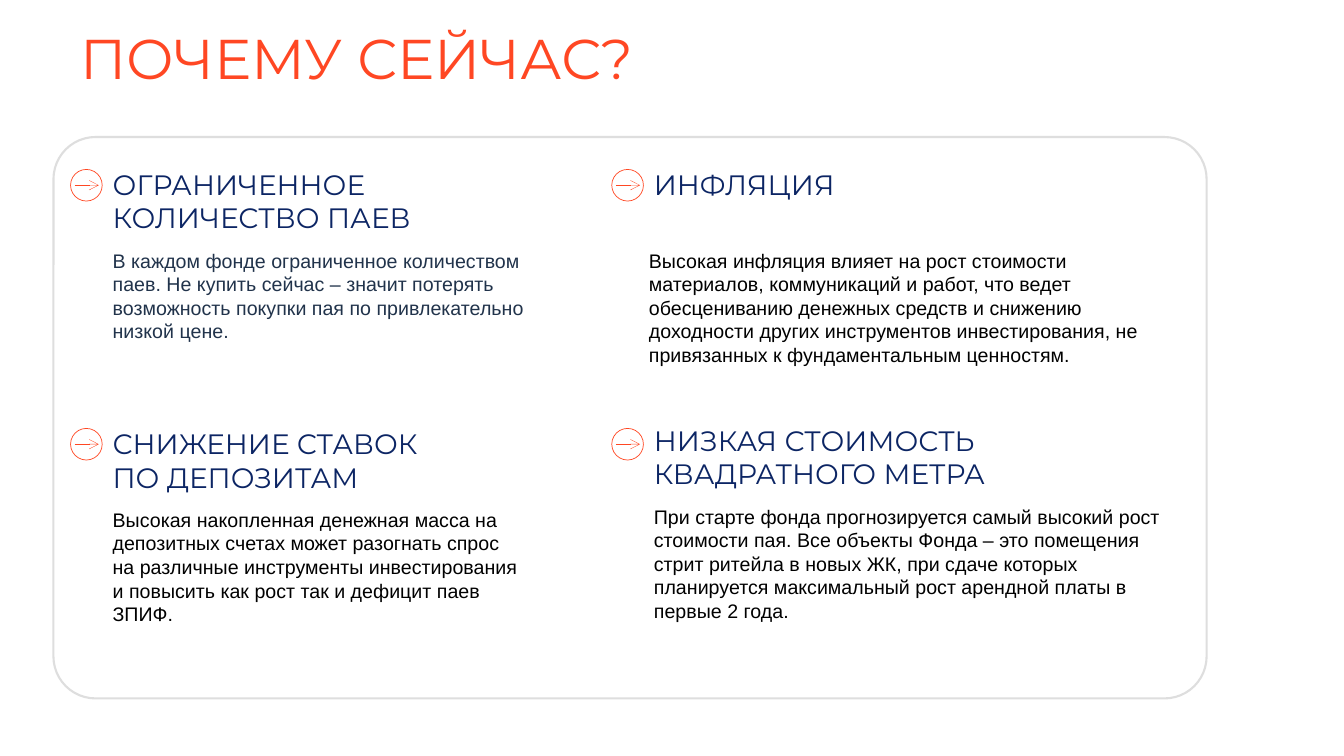
from lxml import etree
from pptx import Presentation
from pptx.dml.color import RGBColor
from pptx.enum.shapes import MSO_CONNECTOR, MSO_SHAPE
from pptx.oxml.ns import qn
from pptx.util import Pt

ROUND = MSO_SHAPE.ROUNDED_RECTANGLE
CIRCLE = MSO_SHAPE.FLOWCHART_CONNECTOR
STRAIGHT = MSO_CONNECTOR.STRAIGHT

COLORS = {"accent": "FF4723", "head": "0C2564", "slate": "21334B",
          "black": "000000", "frame": "DEDEDE"}
TITLE = "ПОЧЕМУ СЕЙЧАС?"
CARDS = [
    {"head": "ОГРАНИЧЕННОЕ КОЛИЧЕСТВО ПАЕВ",
     "body": "В каждом фонде ограниченное количеством паев. Не купить сейчас – значит "
             "потерять возможность покупки пая по привлекательно низкой цене.",
     "wide": (245.5, 311), "color": "slate"},
    {"head": "ИНФЛЯЦИЯ",
     "body": "Высокая инфляция влияет на рост стоимости материалов, коммуникаций и работ, "
             "что ведет обесцениванию денежных средств и снижению доходности других "
             "инструментов инвестирования, не привязанных к фундаментальным ценностям.",
     "wide": (260, 389), "inset": -3.6},
    {"head": "СНИЖЕНИЕ СТАВОК ПО ДЕПОЗИТАМ",
     "body": "Высокая накопленная денежная масса на депозитных счетах может разогнать спрос "
             "на различные инструменты инвестирования и повысить как рост так и дефицит "
             "паев ЗПИФ.",
     "wide": (266, 305)},
    {"head": "НИЗКАЯ СТОИМОСТЬ КВАДРАТНОГО МЕТРА",
     "body": "При старте фонда прогнозируется самый высокий рост стоимости пая. Все объекты "
             "Фонда – это помещения стрит ритейла в новых ЖК, при сдаче которых планируется "
             "максимальный рост арендной платы в первые 2 года.",
     "wide": (382, 389), "lift": 2.2},
]
LEFT, TOP = 50.4, 121
COL, ROW = 386.6, 185
ICON = 22.6


def paint(name):
    return RGBColor.from_string(COLORS[name])


def add_text(slide, text, x, y, w, h, size, color, font="Montserrat"):
    box = slide.shapes.add_textbox(Pt(x), Pt(y), Pt(w), Pt(h))
    frame = box.text_frame
    frame.word_wrap = True
    run = frame.paragraphs[0].add_run()
    run.text = text
    run.font.size = Pt(size)
    run.font.name = font
    run.font.color.rgb = paint(color)


def add_ring(slide, kind, x, y, w, h, color, line):
    shape = slide.shapes.add_shape(kind, Pt(x), Pt(y), Pt(w), Pt(h))
    shape.shadow.inherit = False
    shape.fill.background()
    shape.line.color.rgb = paint(color)
    shape.line.width = Pt(line)
    return shape


def add_icon(slide, x, y):
    add_ring(slide, CIRCLE, x, y, ICON, ICON, "accent", 0.5)
    mid = Pt(y + ICON / 2)
    arrow = slide.shapes.add_connector(STRAIGHT, Pt(x + 2.9), mid, Pt(x + 20.2), mid)
    arrow.line.color.rgb = paint("accent")
    arrow.line.width = Pt(0.25)
    etree.SubElement(arrow.line._get_or_add_ln(), qn("a:tailEnd"), type="arrow")
    etree.SubElement(arrow._element.spPr, qn("a:effectLst"))


def add_card(slide, card, x, y):
    add_icon(slide, x, y)
    left = x + 23
    top = y - 5 - card.get("lift", 0)
    wide, broad = card["wide"]
    add_text(slide, card["head"], left, top, wide, 55.7, size=20, color="head")
    add_text(slide, card["body"], left + card.get("inset", 0), top + 58.2, broad, 92,
             size=14, color=card.get("color", "black"), font="Arial")


def main():
    deck = Presentation()
    deck.slide_width, deck.slide_height = Pt(960), Pt(540)
    slide = deck.slides.add_slide(deck.slide_layouts[6])
    add_text(slide, TITLE, LEFT, 13, 492.5, 55.7, size=40, color="accent")
    frame = add_ring(slide, ROUND, 38.2, 97.9, 823.7, 401, "frame", 1.5)
    frame.adjustments[0] = 0.075
    for i, card in enumerate(CARDS):
        row, col = divmod(i, 2)
        add_card(slide, card, LEFT + col * COL, TOP + row * ROW)
    deck.save("out.pptx")


if __name__ == "__main__":
    main()
